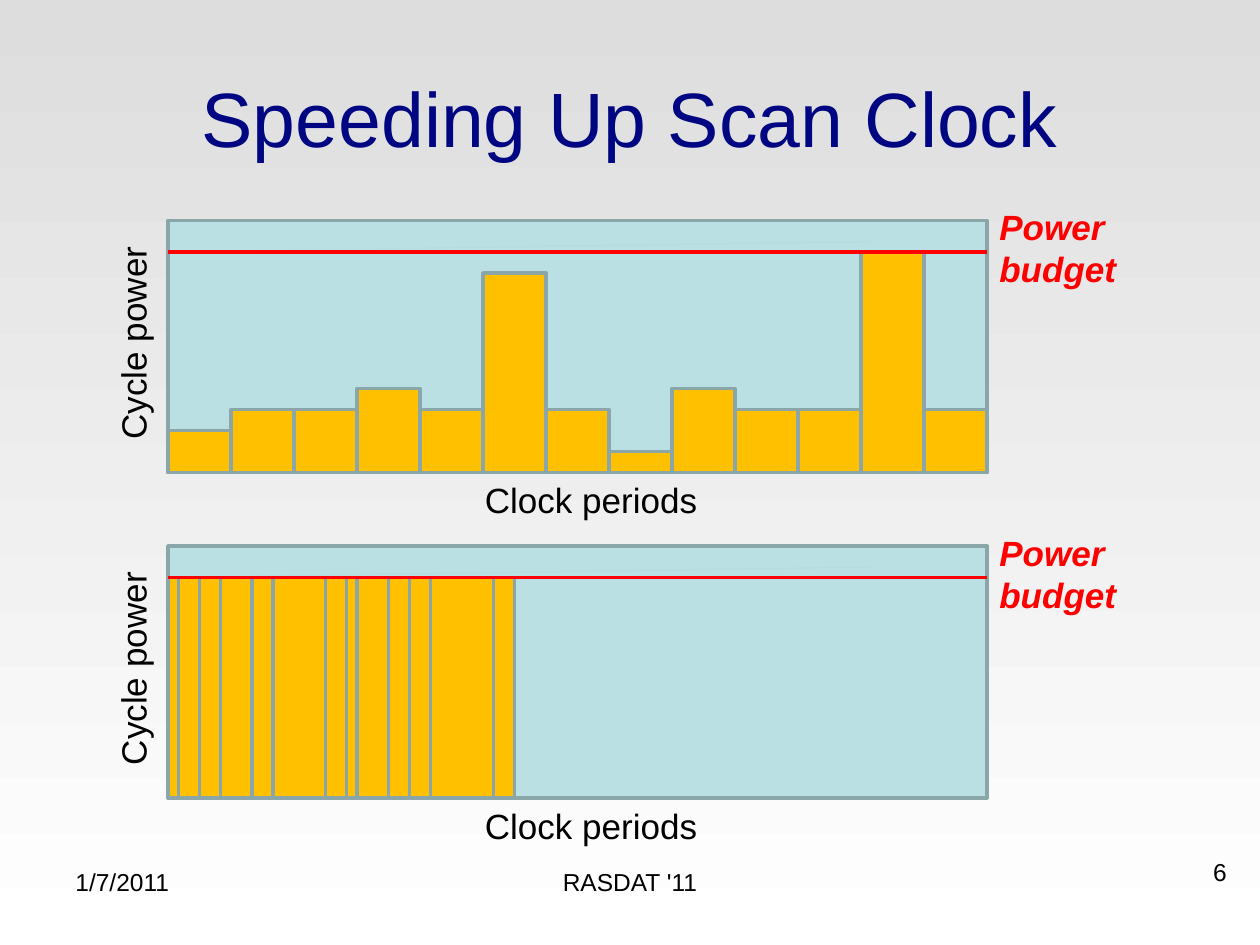
from lxml.etree import SubElement
from pptx import Presentation
from pptx.dml.color import RGBColor
from pptx.enum.shapes import MSO_CONNECTOR, MSO_SHAPE
from pptx.enum.text import MSO_ANCHOR, MSO_AUTO_SIZE, PP_ALIGN
from pptx.oxml.ns import qn
from pptx.util import Pt

PX = 7620  # 120 px to the inch

# Content
TITLE = "Speeding Up Scan Clock"
FOOTERS = [  # text, left, top, width, alignment
    ("1/7/2011", 60, 820, 280, PP_ALIGN.LEFT),
    ("RASDAT '11", 410, 820, 380, PP_ALIGN.CENTER),
    ("6", 900, 810, 280, PP_ALIGN.RIGHT),
]
BUDGET = 210
CYCLE_POWERS = [40, 60, 60, 80, 60, 190, 60, 20, 80, 60, 60, BUDGET, 60]
FAST_PERIODS = [10, 20, 20, 30, 20, 50, 20, 10, 30, 20, 20, 60, 20]
PLOTS = [  # top, (width, height) of each bar
    (210, [(60, power) for power in CYCLE_POWERS]),
    (520, [(period, BUDGET) for period in FAST_PERIODS]),
]
PLOT_LEFT, PLOT_WIDTH, PLOT_HEIGHT = 160, 780, 240

NAVY, BLACK, RED = "000681", "000000", "FF0000"
PALE, GOLD, EDGE, FAINT = "BBE0E3", "FFC000", "8AA6A8", "B6DCDF"


def color(value):
    return RGBColor.from_string(value)


def emu(*lengths):
    return [length * PX for length in lengths]


def style_text(shape, text, size, ink, align=PP_ALIGN.LEFT, strong=False):
    shape.text_frame.text = text
    for paragraph in shape.text_frame.paragraphs:
        paragraph.alignment = align
        for run in paragraph.runs:
            font = run.font
            font.name, font.size = "Arial", Pt(size)
            font.color.rgb = color(ink)
            if strong:
                font.bold = font.italic = True


def add_box(shapes, left, top, width, height, fill):
    shape = shapes.add_shape(MSO_SHAPE.RECTANGLE, *emu(left, top, width, height))
    shape.shadow.inherit = False
    shape.fill.solid()
    shape.fill.fore_color.rgb = color(fill)
    shape.line.color.rgb = color(EDGE)
    shape.line.width = Pt(2)


def add_line(shapes, x1, y1, x2, y2, ink, weight):
    line = shapes.add_connector(MSO_CONNECTOR.STRAIGHT, *emu(x1, y1, x2, y2))
    line.line.color.rgb = color(ink)
    line.line.width = Pt(weight)
    SubElement(line._element.spPr, qn("a:effectLst"))


def add_label(shapes, text, left, top, width, height, ink=BLACK, strong=False, rotation=0):
    label = shapes.add_textbox(*emu(left, top, width, height))
    style_text(label, text, 20, ink, strong=strong)
    label.text_frame.word_wrap = False
    label.text_frame.auto_size = MSO_AUTO_SIZE.SHAPE_TO_FIT_TEXT
    label.rotation = rotation


def add_plot(slide, top, bars):
    shapes = slide.shapes.add_group_shape().shapes
    right, bottom = PLOT_LEFT + PLOT_WIDTH, top + PLOT_HEIGHT
    add_box(shapes, PLOT_LEFT, top, PLOT_WIDTH, PLOT_HEIGHT, PALE)

    # Bars stand side by side on the bottom edge
    left = PLOT_LEFT
    for width, height in bars:
        add_box(shapes, left, bottom - height, width, height, GOLD)
        left += width

    # Budget line and labels
    limit = bottom - BUDGET
    add_line(shapes, PLOT_LEFT, limit, 830, limit - 10, FAINT, 0.75)
    add_line(shapes, PLOT_LEFT, limit, right, limit, RED, 2.25)
    add_label(shapes, "Clock periods", 450, bottom, 228, 53)
    add_label(shapes, "Cycle power", 22, top + 89, 210, 53, rotation=270)
    add_label(shapes, "Power\nbudget", right, top - 20, 137, 92, RED, strong=True)


def main():
    presentation = Presentation()
    presentation.slide_width, presentation.slide_height = emu(1200, 900)
    slide = presentation.slides.add_slide(presentation.slide_layouts[5])

    # Background, shaded from top to bottom
    fill = slide.background.fill
    fill.gradient()
    fill.gradient_angle = 270
    for stop, (position, shade) in zip(fill.gradient_stops, [(0, "DDDDDD"), (1, "FFFFFF")]):
        stop.position = position
        stop.color.rgb = color(shade)

    # Title
    title = slide.shapes.title
    title.left, title.top, title.width, title.height = emu(60, 36, 1080, 150)
    style_text(title, TITLE, 44, NAVY, PP_ALIGN.CENTER)
    title.text_frame.vertical_anchor = MSO_ANCHOR.MIDDLE

    # Footer row
    for text, left, top, width, align in FOOTERS:
        footer = slide.shapes.add_textbox(*emu(left, top, width, 62))
        footer.text_frame.word_wrap = True
        style_text(footer, text, 14, BLACK, align)

    for top, bars in PLOTS:
        add_plot(slide, top, bars)

    presentation.save("out.pptx")


if __name__ == "__main__":
    main()
